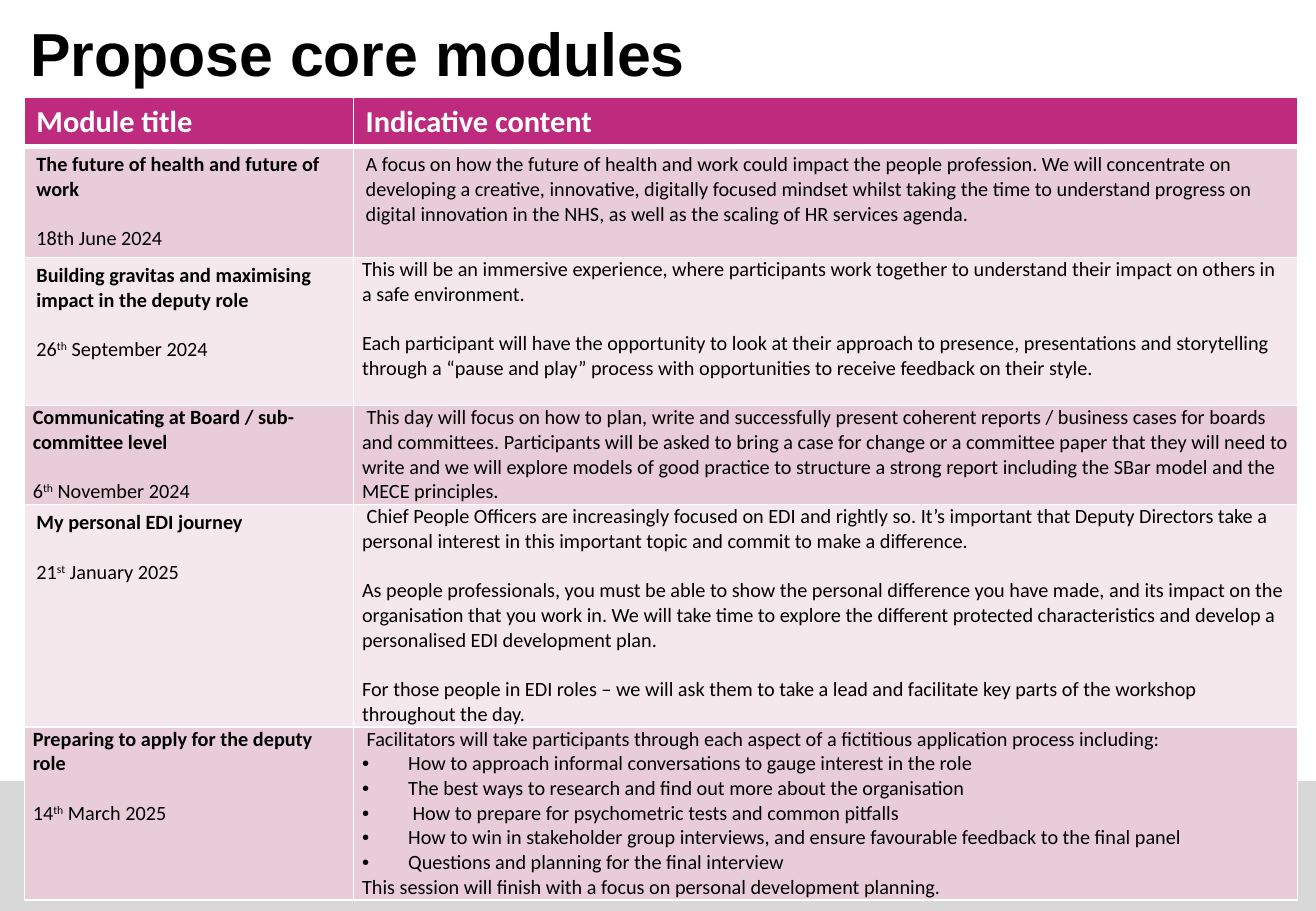
from dataclasses import dataclass

from lxml import etree
from pptx import Presentation
from pptx.dml.color import RGBColor
from pptx.enum.shapes import MSO_SHAPE
from pptx.enum.text import MSO_ANCHOR, MSO_AUTO_SIZE, PP_ALIGN
from pptx.oxml.ns import qn
from pptx.util import Pt

RECT = MSO_SHAPE.RECTANGLE
MIDDLE, TOP = MSO_ANCHOR.MIDDLE, MSO_ANCHOR.TOP
LEFT = PP_ALIGN.LEFT
NO_FIT = MSO_AUTO_SIZE.NONE
TITLE_ONLY = 5


@dataclass(frozen=True)
class Theme:
    black: str = "000000"
    white: str = "FFFFFF"
    band: str = "D7D8D7"
    header: str = "BE2A7E"
    rows: tuple = ("E8CDD8", "F4E8EC")
    title_font: str = "Arial"
    body_font: str = "Calibri"
    title_size: float = 36
    header_size: float = 18
    body_size: float = 12
    line: float = 14.65


THEME = Theme()
SLIDE_W, SLIDE_H = 779.76, 540
ROOMY, TIGHT = (7.2, 3.6), (5.04, 0)
PLAIN = {}
GAP = {"before": THEME.line}
LEAD = {"indent": 2.7}
BULLET = {"left": 27.36, "indent": -27.36, "bullet": "•"}
WIDE_BULLET = {"left": 30, "indent": -30, "bullet": "•"}


@dataclass(frozen=True)
class Module:
    title: str
    date: str
    content: tuple
    height: float
    title_inset: tuple = ROOMY
    content_inset: tuple = TIGHT


MODULES = (
    Module("The future of health and future of work", "18th June 2024", (
        ("A focus on how the future of health and work could impact the people profession. "
         "We will concentrate on developing a creative, innovative, digitally focused mindset "
         "whilst taking the time to understand progress on digital innovation in the NHS, "
         "as well as the scaling of HR services agenda.", PLAIN),
    ), 65.8, content_inset=ROOMY),
    Module("Building gravitas and maximising impact in the deputy role", "26^th^ September 2024", (
        ("This will be an immersive experience, where participants work together to understand "
         "their impact on others in a safe environment.", PLAIN),
        ("Each participant will have the opportunity to look at their approach to presence, "
         "presentations and storytelling through a “pause and play” process with opportunities "
         "to receive feedback on their style.", GAP),
    ), 87.9),
    Module("Communicating at Board / sub-committee level", "6^th^ November 2024", (
        ("This day will focus on how to plan, write and successfully present coherent reports / "
         "business cases for boards and committees. Participants will be asked to bring a case "
         "for change or a committee paper that they will need to write and we will explore models "
         "of good practice to structure a strong report including the SBar model and the MECE "
         "principles.", LEAD),
    ), 58.6, title_inset=TIGHT),
    Module("My personal EDI journey", "21^st^ January 2025", (
        ("Chief People Officers are increasingly focused on EDI and rightly so. It’s important "
         "that Deputy Directors take a personal interest in this important topic and commit to "
         "make a difference.", LEAD),
        ("As people professionals, you must be able to show the personal difference you have made, "
         "and its impact on the organisation that you work in. We will take time to explore the "
         "different protected characteristics and develop a personalised EDI development plan.", GAP),
        ("For those people in EDI roles – we will ask them to take a lead and facilitate key parts "
         "of the workshop throughout the day.", GAP),
    ), 131.8),
    Module("Preparing to apply for the deputy role", "14^th^ March 2025", (
        ("Facilitators will take participants through each aspect of a fictitious application "
         "process including:", LEAD),
        ("How to approach informal conversations to gauge interest in the role", BULLET),
        ("The best ways to research and find out more about the organisation", BULLET),
        ("How to prepare for psychometric tests and common pitfalls", WIDE_BULLET),
        ("How to win in stakeholder group interviews, and ensure favourable feedback to the "
         "final panel", BULLET),
        ("Questions and planning for the final interview", BULLET),
        ("This session will finish with a focus on personal development planning.", PLAIN),
    ), 102.6, title_inset=TIGHT),
)


def rgb(color):
    return RGBColor.from_string(color)


def write(tf, text, size=THEME.body_size, color=THEME.black, font=THEME.body_font, bold=False,
          before=0, left=0, indent=0, bullet=None, spacing=1.0):
    """Append a paragraph; text between ^ marks is set as superscript."""
    p = tf.add_paragraph() if tf.text else tf.paragraphs[0]
    p.alignment = LEFT
    pPr = p._p.get_or_add_pPr()
    pPr.set("marL", str(int(Pt(left))))
    pPr.set("indent", str(int(Pt(indent))))
    if bullet:
        etree.SubElement(pPr, qn("a:buFont")).set("typeface", THEME.title_font)
        etree.SubElement(pPr, qn("a:buChar")).set("char", bullet)
    else:
        etree.SubElement(pPr, qn("a:buNone"))
    p.line_spacing = spacing
    p.space_before, p.space_after = Pt(before), Pt(0)
    for i, part in enumerate(text.split("^")):
        r = p.add_run()
        r.text = part
        r.font.size, r.font.name, r.font.bold = Pt(size), font, bold
        r.font.color.rgb = rgb(color)
        if i % 2:
            r._r.get_or_add_rPr().set("baseline", "30000")


def style_cell(cell, fill, inset, top=1, bottom=1):
    tcPr = cell._tc.get_or_add_tcPr()
    for side, width in (("L", 1), ("R", 1), ("T", top), ("B", bottom)):
        ln = etree.SubElement(tcPr, qn(f"a:ln{side}"), w=str(int(Pt(width))))
        solid = etree.SubElement(ln, qn("a:solidFill"))
        etree.SubElement(solid, qn("a:srgbClr"), val=THEME.white)
    cell.fill.solid()
    cell.fill.fore_color.rgb = rgb(fill)
    cell.vertical_anchor = TOP
    cell.margin_left = cell.margin_right = Pt(inset[0])
    cell.margin_top = cell.margin_bottom = Pt(inset[1])


def add_band(slide, x, y, w, h):
    sp = slide.shapes.add_shape(RECT, Pt(x), Pt(y), Pt(w), Pt(h))
    sp.shadow.inherit = False
    sp.fill.solid()
    sp.fill.fore_color.rgb = rgb(THEME.band)
    sp.line.fill.background()


def add_title(slide, text, x, y, w, h):
    sp = slide.shapes.title
    sp.left, sp.top, sp.width, sp.height = Pt(x), Pt(y), Pt(w), Pt(h)
    tf = sp.text_frame
    tf.word_wrap, tf.auto_size, tf.vertical_anchor = True, NO_FIT, MIDDLE
    write(tf, text, size=THEME.title_size, font=THEME.title_font, bold=True, spacing=0.9)


def add_modules(slide, x, y, w, title_w=195.12, header_h=29.2):
    height = header_h + sum(m.height for m in MODULES)
    table = slide.shapes.add_table(len(MODULES) + 1, 2, Pt(x), Pt(y), Pt(w), Pt(height)).table
    table.horz_banding = False
    table.columns[0].width, table.columns[1].width = Pt(title_w), Pt(w - title_w)
    table.rows[0].height = Pt(header_h)
    for col, heading in enumerate(("Module title", "Indicative content")):
        cell = table.cell(0, col)
        style_cell(cell, THEME.header, ROOMY, bottom=3)
        write(cell.text_frame, heading, size=THEME.header_size, color=THEME.white, bold=True)
    for row, module in enumerate(MODULES, 1):
        table.rows[row].height = Pt(module.height)
        fill = THEME.rows[(row - 1) % 2]
        title, content = table.cell(row, 0), table.cell(row, 1)
        for cell, inset in ((title, module.title_inset), (content, module.content_inset)):
            style_cell(cell, fill, inset, top=3 if row == 1 else 1)
        write(title.text_frame, module.title, bold=True)
        write(title.text_frame, module.date, **GAP)
        for text, fmt in module.content:
            write(content.text_frame, text, **fmt)


def main():
    prs = Presentation()
    prs.slide_width, prs.slide_height = Pt(SLIDE_W), Pt(SLIDE_H)
    slide = prs.slides.add_slide(prs.slide_layouts[TITLE_ONLY])
    add_band(slide, 0, 463, SLIDE_W, SLIDE_H - 463)
    add_title(slide, "Propose core modules", 10.8, 10.08, 672.48, 47.52)
    add_modules(slide, 14.4, 57.6, 754.56)
    prs.save("out.pptx")


if __name__ == "__main__":
    main()
